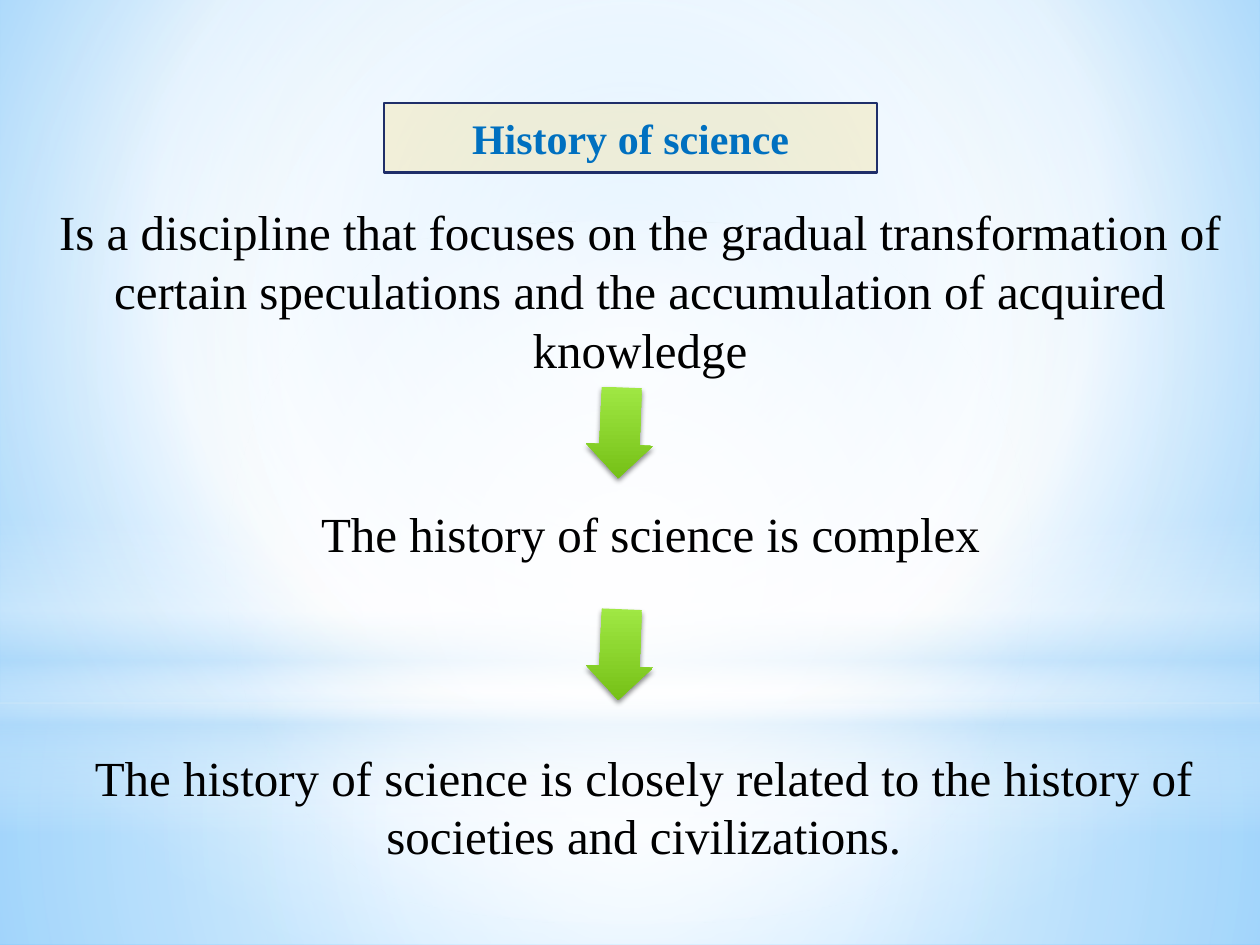
from dataclasses import dataclass
from typing import Optional

from lxml.etree import SubElement as Sub
from pptx import Presentation
from pptx.dml.color import RGBColor
from pptx.enum.shapes import MSO_SHAPE as Kind
from pptx.enum.text import MSO_ANCHOR as Anchor, MSO_AUTO_SIZE as Fit, PP_ALIGN as Align
from pptx.oxml.ns import qn
from pptx.util import Inches, Pt

WHITE = RGBColor(0xFF, 0xFF, 0xFF)
BLACK = RGBColor(0, 0, 0)
SKY = RGBColor(0x9E, 0xD5, 0xFF)
AZURE = RGBColor(0x5B, 0xB9, 0xFF)
PALE = RGBColor(0xB4, 0xDC, 0xFA)
LIME = RGBColor(0xA0, 0xE8, 0x44)
GREEN = RGBColor(0x75, 0xC0, 0x16)
GOLD = RGBColor(0xFF, 0xC0, 0x00)
NAVY = RGBColor(0x1F, 0x2E, 0x69)
BLUE = RGBColor(0x00, 0x70, 0xC0)
FONT = "Times New Roman"
MID = (50, 50, 50, 50)


@dataclass
class Stop:
    pos: int
    color: RGBColor
    alpha: int = 100


@dataclass
class Grad:
    stops: list[Stop]
    focus: Optional[tuple] = None


@dataclass
class Layer:
    kind: Kind
    top: float
    height: float
    grad: Grad


@dataclass
class Note:
    text: str
    box: tuple
    wrap: bool = True
    align: Align = Align.CENTER


LAYERS = [
    Layer(Kind.RECTANGLE, 5.58, 1.92, Grad(
        [Stop(0, WHITE, 91), Stop(37, WHITE, 76), Stop(100, PALE, 79)], MID)),
    Layer(Kind.RECTANGLE, 0, 5.58, Grad(
        [Stop(0, WHITE, 89), Stop(48, WHITE, 62), Stop(100, PALE, 79)], MID)),
    Layer(Kind.RECTANGLE, 4.12, 2.5, Grad(
        [Stop(0, WHITE, 0), Stop(29, WHITE, 30), Stop(45, PALE, 40),
         Stop(55, WHITE, 26), Stop(65, PALE, 60), Stop(100, WHITE, 0)])),
    Layer(Kind.OVAL, 1.75, 5.58, Grad([Stop(0, WHITE), Stop(56, WHITE, 0)], MID)),
]
NOTES = [
    Note("Is a discipline that focuses on the gradual transformation of certain "
         "speculations and the accumulation of acquired knowledge", (0.18, 1.55, 9.8, 1.51)),
    Note("The history of science is complex", (2.45, 3.95, 5.48, 0.57), False, Align.LEFT),
    Note("The history of science is closely related to the history of societies "
         "and civilizations.", (0.34, 5.88, 9.54, 1.04)),
]


def add_tint(node, color: RGBColor, alpha: int) -> None:
    tint = Sub(node, qn("a:srgbClr"), val=str(color))
    Sub(tint, qn("a:alpha"), val=str(alpha * 1000))


def set_grad(fill, props, grad: Grad) -> None:
    fill.solid()
    old = props.find(qn("a:solidFill"))
    node = Sub(props, qn("a:gradFill"), rotWithShape="0")
    props.replace(old, node)
    stops = Sub(node, qn("a:gsLst"))
    for stop in grad.stops:
        add_tint(Sub(stops, qn("a:gs"), pos=str(stop.pos * 1000)), stop.color, stop.alpha)
    if grad.focus:
        ring = Sub(node, qn("a:path"), path="circle")
        sides = {side: str(val * 1000) for side, val in zip("ltrb", grad.focus)}
        Sub(ring, qn("a:fillToRect"), **sides)
    else:
        Sub(node, qn("a:lin"), ang="5400000", scaled="0")


def add_form(slide, kind: Kind, box: tuple, grad: Optional[Grad] = None):
    form = slide.shapes.add_shape(kind, *map(Inches, box))
    form.shadow.inherit = False
    form.line.fill.background()
    if grad:
        set_grad(form.fill, form.element.spPr, grad)
    return form


def set_text(frame, text: str, size: int, color: RGBColor, align: Align) -> None:
    para = frame.paragraphs[0]
    para.text = text
    para.alignment = align
    font = para.font
    font.name, font.size, font.color.rgb = FONT, Pt(size), color


def add_title(slide) -> None:
    form = add_form(slide, Kind.RECTANGLE, (3.05, 0.82, 3.91, 0.55))
    form.fill.solid()
    form.fill.fore_color.rgb = GOLD
    tint = form.element.spPr.find(qn("a:solidFill"))[0]
    Sub(tint, qn("a:alpha"), val="15000")
    form.line.color.rgb = NAVY
    form.line.width = Pt(1.25)
    frame = form.text_frame
    frame.vertical_anchor = Anchor.MIDDLE
    set_text(frame, "History of science", 24, BLUE, Align.CENTER)
    frame.paragraphs[0].font.bold = True


def add_note(slide, note: Note) -> None:
    frame = slide.shapes.add_textbox(*map(Inches, note.box)).text_frame
    frame.word_wrap = note.wrap
    frame.auto_size = Fit.SHAPE_TO_FIT_TEXT
    set_text(frame, note.text, 28, BLACK, note.align)


def add_arrow(slide, top: float) -> None:
    grad = Grad([Stop(0, LIME), Stop(100, GREEN)])
    form = add_form(slide, Kind.RIGHT_ARROW, (4.56, top, 0.72, 0.53), grad)
    form.rotation = 92.3
    form.adjustments[0] = 0.6
    form.adjustments[1] = 0.5
    glow = form.element.spPr.find(qn("a:effectLst"))
    shade = Sub(glow, qn("a:outerShdw"), blurRad=str(Pt(3.1)), dist=str(Pt(1.8)),
                dir="5400000", rotWithShape="0")
    add_tint(shade, BLACK, 45)


def main() -> None:
    deck = Presentation()
    deck.slide_width, deck.slide_height = Inches(10), Inches(7.5)
    slide = deck.slides.add_slide(deck.slide_layouts[6])
    back = slide.background.fill
    back.solid()
    props = slide.element.find(".//" + qn("p:bgPr"))
    set_grad(back, props, Grad(
        [Stop(0, SKY), Stop(60, WHITE), Stop(100, AZURE)], (20, 10, 20, 60)))
    for layer in LAYERS:
        add_form(slide, layer.kind, (0, layer.top, 10, layer.height), layer.grad)
    add_title(slide)
    for note in NOTES:
        add_note(slide, note)
    for top in (3.17, 4.93):
        add_arrow(slide, top)
    deck.save("out.pptx")


if __name__ == "__main__":
    main()
